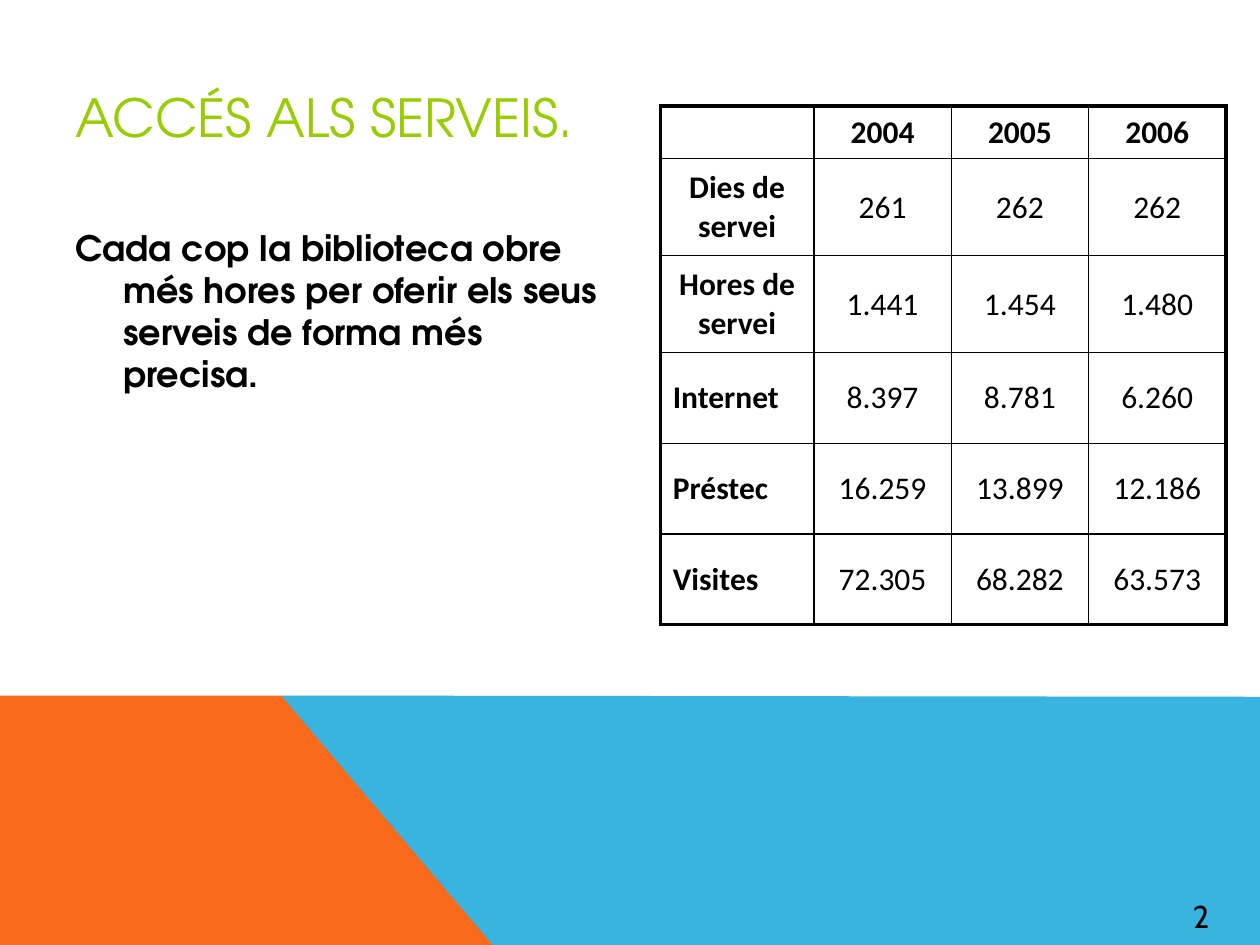
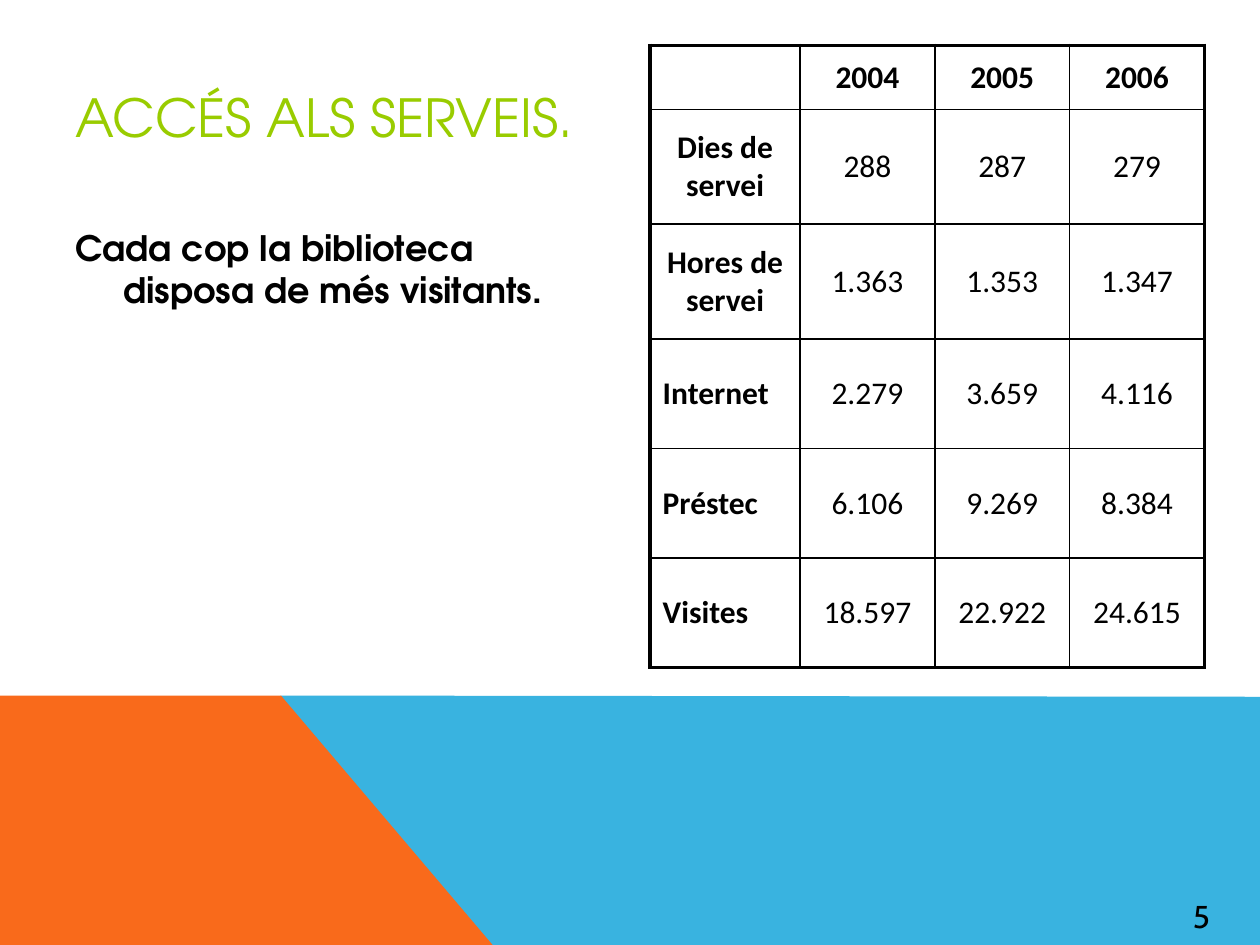
from dataclasses import dataclass
from typing import Optional

from lxml.etree import SubElement
from pptx import Presentation
from pptx.dml.color import RGBColor
from pptx.enum.text import MSO_ANCHOR, PP_ALIGN
from pptx.oxml.ns import qn
from pptx.util import Inches, Pt


@dataclass(frozen=True)
class Theme:
    green: str = "99CC00"
    blue: str = "08A1D9"
    orange: str = "F96A1B"
    black: str = "000000"
    text_font: str = "TeX Gyre Adventor"
    table_font: str = "Calibri"
    number_font: str = "Cabin"
    title_size: int = 30
    body_size: int = 20
    small_size: int = 18
    outer_border: float = 2.25
    inner_border: float = 1


@dataclass(frozen=True)
class Band:
    points: tuple
    color: str
    opacity: int = 100


@dataclass(frozen=True)
class ServiceTable:
    left: float
    top: float
    label_width: float
    year_width: float
    row_heights: tuple
    figures: tuple


@dataclass(frozen=True)
class ServicePage:
    number: str
    message: str
    table: ServiceTable


THEME = Theme()
TITLE = "ACCÉS ALS SERVEIS."
YEARS = ("2004", "2005", "2006")
SERVICES = ("Dies de servei", "Hores de servei", "Internet", "Préstec", "Visites")
CENTERED_SERVICES = SERVICES[:2]

BANDS = (
    Band(((0, 7.5), (2.23, 5.52), (10, 5.53), (10, 7.5)), THEME.blue, 80),
    Band(((0, 7.5), (0, 5.52), (2.23, 5.52), (3.91, 7.5)), THEME.orange),
)

PAGES = (
    ServicePage(
        "2",
        "Cada cop la biblioteca obre més hores per oferir els seus "
        "serveis de forma més precisa.",
        ServiceTable(
            5.24, 0.84, 1.22, 1.09, (0.42, 0.77, 0.77, 0.72, 0.72, 0.72),
            (
                ("261", "262", "262"),
                ("1.441", "1.454", "1.480"),
                ("8.397", "8.781", "6.260"),
                ("16.259", "13.899", "12.186"),
                ("72.305", "68.282", "63.573"),
            ),
        ),
    ),
    ServicePage(
        "5",
        "Cada cop la biblioteca disposa de més visitants.",
        ServiceTable(
            5.16, 0.36, 1.19, 1.07, (0.51, 0.91, 0.91, 0.87, 0.87, 0.87),
            (
                ("288", "287", "279"),
                ("1.363", "1.353", "1.347"),
                ("2.279", "3.659", "4.116"),
                ("6.106", "9.269", "8.384"),
                ("18.597", "22.922", "24.615"),
            ),
        ),
    ),
)


def write(frame, text: str, *, font: str, size: float, color: str = THEME.black,
          bold: bool = False, align: Optional[PP_ALIGN] = None,
          hanging: float = 0) -> None:
    """Fill a text frame with one paragraph in the given format."""
    paragraph = frame.paragraphs[0]
    if hanging:
        properties = paragraph._p.get_or_add_pPr()
        properties.set("marL", str(Inches(hanging)))
        properties.set("indent", str(-Inches(hanging)))
    if align is not None:
        paragraph.alignment = align
    run = paragraph.add_run()
    run.text = text
    run.font.name = font
    run.font.size = Pt(size)
    run.font.bold = bold
    run.font.color.rgb = RGBColor.from_string(color)


def add_text(slide, box: tuple, text: str, *,
             anchor: MSO_ANCHOR = MSO_ANCHOR.TOP, **text_format) -> None:
    frame = slide.shapes.add_textbox(*map(Inches, box)).text_frame
    frame.word_wrap = True
    frame.vertical_anchor = anchor
    write(frame, text, **text_format)


def add_band(slide, band: Band) -> None:
    start, *others = [tuple(map(Inches, point)) for point in band.points]
    builder = slide.shapes.build_freeform(*start)
    builder.add_line_segments(others, close=True)
    shape = builder.convert_to_shape()
    shape.shadow.inherit = False
    shape.line.fill.background()
    shape.fill.solid()
    shape.fill.fore_color.rgb = RGBColor.from_string(band.color)
    if band.opacity < 100:
        color = shape._element.spPr.find(f"{qn('a:solidFill')}/{qn('a:srgbClr')}")
        SubElement(color, qn("a:alpha"), val=str(band.opacity * 1000))


def set_borders(cell, outer_sides: dict) -> None:
    """Draw each side of a cell, thicker where it lies on the table's edge."""
    properties = cell._tc.get_or_add_tcPr()
    for side, is_outer in outer_sides.items():
        width = THEME.outer_border if is_outer else THEME.inner_border
        line = SubElement(properties, qn(f"a:ln{side}"), w=str(Pt(width)))
        fill = SubElement(line, qn("a:solidFill"))
        SubElement(fill, qn("a:srgbClr"), val=THEME.black)


def add_service_table(slide, spec: ServiceTable) -> None:
    rows = [("", *YEARS)]
    rows += [(service, *values) for service, values in zip(SERVICES, spec.figures)]
    widths = [spec.label_width] + [spec.year_width] * len(YEARS)
    table = slide.shapes.add_table(
        len(rows), len(widths), Inches(spec.left), Inches(spec.top),
        Inches(sum(widths)), Inches(sum(spec.row_heights))).table
    table.first_row = table.horz_banding = False
    for column, width in zip(table.columns, widths):
        column.width = Inches(width)
    for row, height in zip(table.rows, spec.row_heights):
        row.height = Inches(height)

    last_row, last_column = len(rows) - 1, len(widths) - 1
    for r, values in enumerate(rows):
        for c, text in enumerate(values):
            cell = table.cell(r, c)
            set_borders(cell, {"L": c == 0, "R": c == last_column,
                               "T": r == 0, "B": r == last_row})
            cell.fill.background()
            cell.vertical_anchor = MSO_ANCHOR.MIDDLE
            if text:
                centered = c > 0 or text in CENTERED_SERVICES
                write(cell.text_frame, text, font=THEME.table_font,
                      size=THEME.small_size, bold=r == 0 or c == 0,
                      align=PP_ALIGN.CENTER if centered else PP_ALIGN.LEFT)


def add_page(presentation, page: ServicePage) -> None:
    slide = presentation.slides.add_slide(presentation.slide_layouts[6])
    for band in BANDS:
        add_band(slide, band)
    add_text(slide, (9.37, 7.07, 0.63, 0.4), page.number,
             font=THEME.number_font, size=THEME.small_size)
    add_text(slide, (0.5, 0.3, 9, 1.25), TITLE, anchor=MSO_ANCHOR.MIDDLE,
             font=THEME.text_font, size=THEME.title_size, color=THEME.green)
    add_text(slide, (0.5, 1.75, 4.42, 4.95), page.message, font=THEME.text_font,
             size=THEME.body_size, bold=True, hanging=0.38)
    add_service_table(slide, page.table)


def main() -> None:
    presentation = Presentation()
    presentation.slide_width = Inches(10)
    presentation.slide_height = Inches(7.5)
    for page in PAGES:
        add_page(presentation, page)
    presentation.save("out.pptx")


if __name__ == "__main__":
    main()
